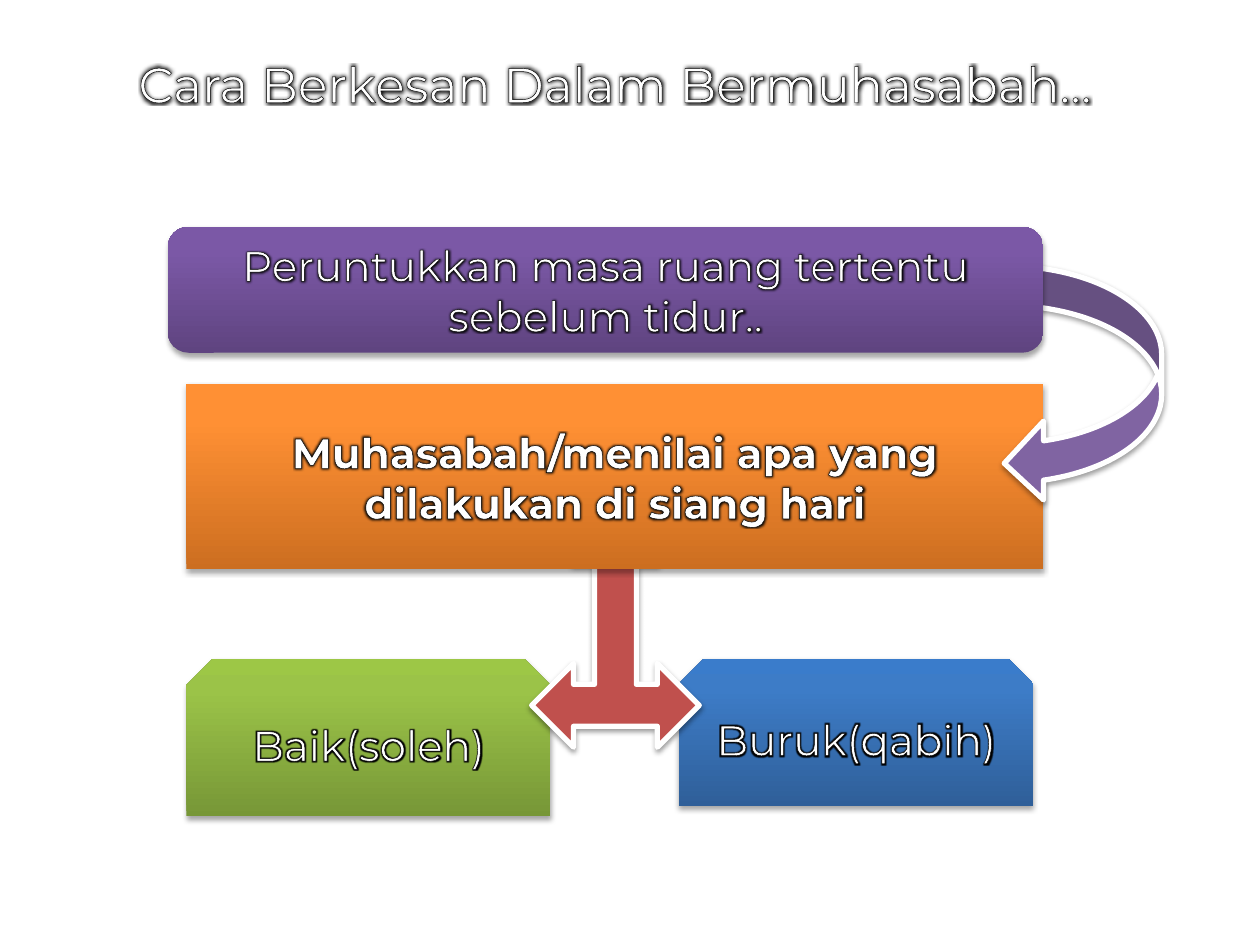
from pptx import Presentation
from pptx.dml.color import RGBColor
from pptx.enum.shapes import MSO_SHAPE
from pptx.enum.text import MSO_ANCHOR, MSO_AUTO_SIZE, PP_ALIGN
from pptx.oxml import parse_xml
from pptx.oxml.ns import nsdecls
from pptx.util import Inches, Pt

RECTANGLE = MSO_SHAPE.RECTANGLE
ROUNDED = MSO_SHAPE.ROUNDED_RECTANGLE
SNIPPED = MSO_SHAPE.SNIP_2_SAME_RECTANGLE
THREE_WAY_ARROW = MSO_SHAPE.LEFT_RIGHT_UP_ARROW
CURVED_ARROW = MSO_SHAPE.CURVED_LEFT_ARROW
MIDDLE = MSO_ANCHOR.MIDDLE
CENTER = PP_ALIGN.CENTER
NO_AUTOFIT = MSO_AUTO_SIZE.NONE
TITLE_ONLY = 5
FONT = "Montserrat"
WHITE = "FFFFFF"


def color(value):
    """Turn a hex string into a colour."""
    return RGBColor.from_string(value)


def place(shape, box):
    """Move and size a shape to left, top, width and height in inches."""
    shape.left, shape.top, shape.width, shape.height = map(Inches, box)


def write(shape, text, size, bold=False):
    """Put centred white text with a black outline and glow in a shape."""
    frame = shape.text_frame
    frame.word_wrap = True
    frame.auto_size = NO_AUTOFIT
    frame.vertical_anchor = MIDDLE
    paragraph = frame.paragraphs[0]
    paragraph.alignment = CENTER
    font = paragraph.font
    font.name, font.size, font.bold = FONT, Pt(size), bold
    font.color.rgb = color(WHITE)
    run = paragraph.add_run()
    run.text = text
    properties = run._r.get_or_add_rPr()
    black = '<a:srgbClr val="000000"/>'
    properties.append(parse_xml(
        f'<a:ln {nsdecls("a")} w="{Pt(0.75)}"><a:solidFill>{black}</a:solidFill></a:ln>'))
    properties.append(parse_xml(
        f'<a:effectLst {nsdecls("a")}><a:glow rad="{Pt(3)}">{black}</a:glow></a:effectLst>'))


def add_shadow(shape, distance, opacity):
    """Give a shape a soft black shadow straight below it."""
    shape.shadow.inherit = False
    effects = shape._element.spPr.find("{*}effectLst")
    effects.append(parse_xml(
        f'<a:outerShdw {nsdecls("a")} blurRad="{Pt(3.1)}" dist="{Pt(distance)}" '
        'dir="5400000" rotWithShape="0"><a:srgbClr val="000000">'
        f'<a:alpha val="{opacity * 1000}"/></a:srgbClr></a:outerShdw>'))


def fill_gradient(shape, colors):
    """Fill a shape with three colours running from bottom to top."""
    shape.fill.gradient()
    gradient = shape._element.spPr.find("{*}gradFill")
    stops = gradient.find("{*}gsLst")
    for stop in list(stops):
        stops.remove(stop)
    for position, value in zip((0, 80, 100), colors):
        stops.append(parse_xml(
            f'<a:gs {nsdecls("a")} pos="{position * 1000}"><a:srgbClr val="{value}"/></a:gs>'))
    shape.fill.gradient_angle = 90


def add_box(slide, kind, box, colors, text, bold=False):
    """Add a gradient box with a label."""
    shape = slide.shapes.add_shape(kind, *map(Inches, box))
    fill_gradient(shape, colors)
    shape.line.fill.background()
    add_shadow(shape, 1.8, 35)
    write(shape, text, 24, bold)


def add_arrow(slide, kind, box, fill):
    """Add a block arrow with a white border."""
    shape = slide.shapes.add_shape(kind, *map(Inches, box))
    shape.fill.solid()
    shape.fill.fore_color.rgb = color(fill)
    shape.line.color.rgb = color(WHITE)
    shape.line.width = Pt(3)
    add_shadow(shape, 1.6, 38)


def main():
    """Build the slide and save it."""
    presentation = Presentation()
    presentation.slide_width, presentation.slide_height = Inches(10), Inches(7.5)
    slide = presentation.slides.add_slide(presentation.slide_layouts[TITLE_ONLY])
    title = slide.shapes.title
    place(title, (0.62, 0.23, 8.52, 0.86))
    write(title, "Cara Berkesan Dalam Bermuhasabah…", 28)

    add_box(slide, SNIPPED, (1.48, 5.23, 2.89, 1.25),
            ("779737", "9BC348", "9DC746"), "Baik(soleh)")
    add_box(slide, SNIPPED, (5.39, 5.23, 2.81, 1.17),
            ("2F5F99", "3D7CC7", "3A7CCB"), "Buruk(qabih)")
    add_arrow(slide, THREE_WAY_ARROW, (4.22, 4.14, 1.33, 1.79), "C0504D")
    add_box(slide, RECTANGLE, (1.48, 3.05, 6.8, 1.47),
            ("CC6E20", "FF9034", "FF9136"),
            "Muhasabah/menilai apa yang dilakukan di siang hari", True)
    add_arrow(slide, CURVED_ARROW, (7.97, 2.11, 1.25, 1.88), "8064A2")
    add_box(slide, ROUNDED, (1.33, 1.8, 6.95, 1),
            ("5F4480", "7B58A6", "7C57A8"),
            "Peruntukkan masa ruang tertentu sebelum tidur..")
    presentation.save("out.pptx")


if __name__ == "__main__":
    main()
